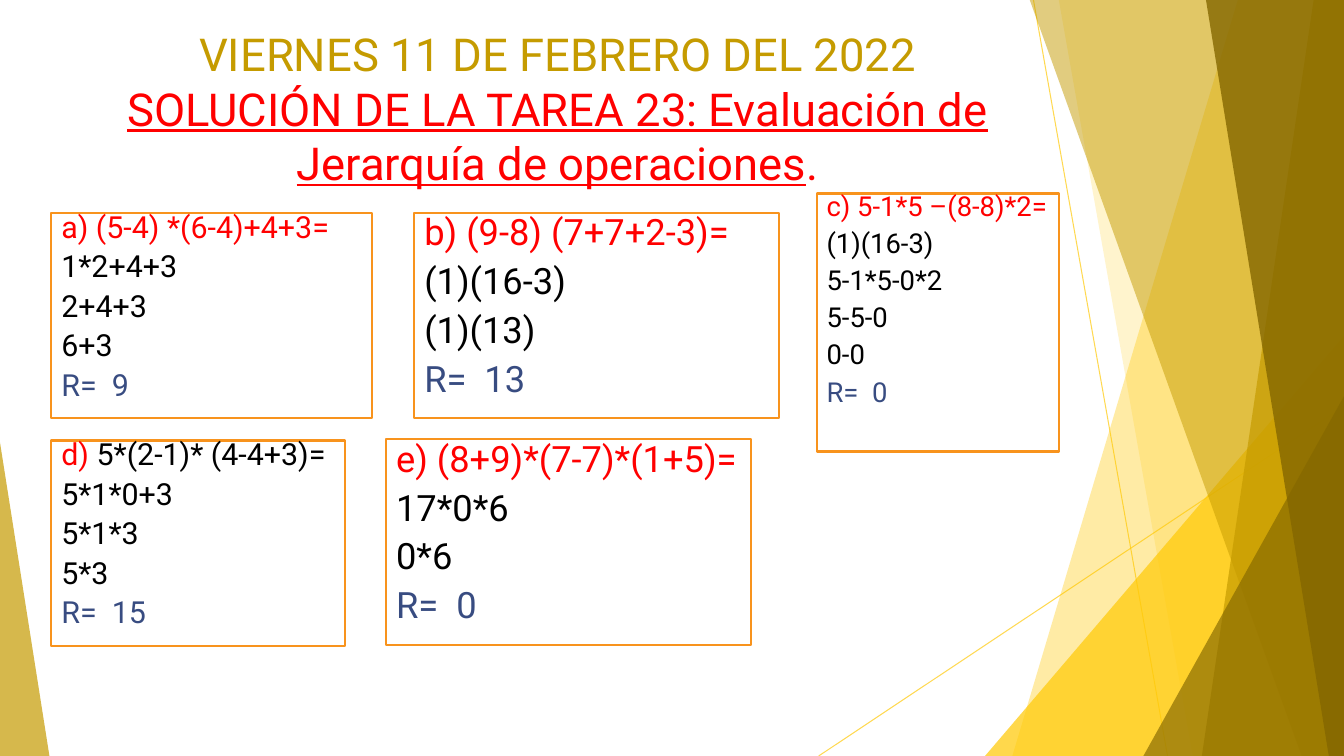
from dataclasses import dataclass

from lxml.etree import SubElement
from pptx import Presentation
from pptx.dml.color import RGBColor
from pptx.dml.fill import FillFormat
from pptx.enum.shapes import MSO_CONNECTOR, MSO_SHAPE
from pptx.enum.text import MSO_ANCHOR, MSO_AUTO_SIZE, PP_ALIGN
from pptx.oxml.ns import qn
from pptx.slide import Slide
from pptx.text.text import Font
from pptx.util import Emu, Pt

PX = 9144  # EMU per px, 100 px to the inch
WIDTH, HEIGHT = 1333, 750
FONT = "Roboto"
COLORS = {
    "yellow": "FFCA08",
    "gold": "C59B00",
    "bronze": "846700",
    "orange": "F8931D",
    "red": "FF0000",
    "blue": "384C81",
    "black": "000000",
    "white": "FFFFFF",
}


@dataclass
class Ray:
    start: tuple[int, int]
    end: tuple[int, int]


@dataclass
class Band:
    """Facet reaching the right edge, with a slanted left side."""
    top_x: int
    bottom_x: int
    color: str
    opacity: int


@dataclass
class Wedge:
    """Right triangle standing on the bottom edge."""
    left: int
    top: int
    width: int
    apex: int
    color: str
    opacity: int


@dataclass
class Exercise:
    box: tuple[int, int, int, int]
    size: float
    spacing: float
    label: str
    statement: str
    steps: list[str]
    result: str
    statement_color: str = "red"


RAYS = [Ray((1025, 0), (1158, 750)), Ray((1333, 403), (812, 750))]
FACETS = [
    Band(1228, 1004, "yellow", 36),
    Band(1050, 1183, "yellow", 20),
    Wedge(977, 333, 356, 1, "yellow", 72),
    Band(1021, 1291, "gold", 50),
    Band(1303, 1192, "gold", 70),
    Band(1196, 1318, "bronze", 80),
    Wedge(1134, 393, 199, 1, "bronze", 66),
    Wedge(0, 439, 49, 0, "gold", 70),
]
EXERCISES = [
    Exercise((51, 211, 318, 204), 21.7, 0.7, "a) ", "(5-4) *(6-4)+4+3=",
             ["1*2+4+3", "2+4+3", "6+3"], "R=  9"),
    Exercise((411, 211, 362, 204), 25.9, 0.8, "b) ", "(9-8) (7+7+2-3)=",
             ["(1)(16-3)", "(1)(13)"], "R=  13"),
    Exercise((810, 192, 240, 256), 19.6, 0.7, "c) ", "5-1*5 –(8-8)*2=",
             ["(1)(16-3)", "5-1*5-0*2", "5-5-0", "0-0"], "R=  0"),
    Exercise((51, 437, 291, 204), 21.7, 0.7, "d) ", "5*(2-1)* (4-4+3)=",
             ["5*1*0+3", "5*1*3", "5*3"], "R=  15", "black"),
    Exercise((383, 436, 362, 204), 25.9, 0.8, "e) ", "(8+9)*(7-7)*(1+5)=",
             ["17*0*6", "0*6"], "R=  0"),
]


def px(*lengths: int) -> list[Emu]:
    return [Emu(length * PX) for length in lengths]


def rgb(color: str) -> RGBColor:
    return RGBColor.from_string(COLORS[color])


def paint(fill: FillFormat, owner, color: str, opacity: int) -> None:
    """Fill with a colour and set its opacity in the owner's XML."""
    fill.solid()
    fill.fore_color.rgb = rgb(color)
    srgb = next(owner.iter(qn("a:srgbClr")))
    SubElement(srgb, qn("a:alpha"), val=str(opacity * 1000))


def style(font: Font, size: float, color: str) -> None:
    font.name = FONT
    font.size = Pt(size)
    font.color.rgb = rgb(color)


def draw_ray(slide: Slide, ray: Ray) -> None:
    line = slide.shapes.add_connector(
        MSO_CONNECTOR.STRAIGHT, *px(*ray.start, *ray.end))
    line.line.width = Pt(0.75)
    properties = line.element.spPr
    paint(line.line.fill, properties, "yellow", 70)
    SubElement(properties, qn("a:effectLst"))


def draw_facet(slide: Slide, facet: Band | Wedge) -> None:
    if isinstance(facet, Band):
        builder = slide.shapes.build_freeform(facet.top_x, -1, scale=PX)
        builder.add_line_segments(
            [(WIDTH, -1), (WIDTH, HEIGHT), (facet.bottom_x, HEIGHT)])
        shape = builder.convert_to_shape()
    else:
        shape = slide.shapes.add_shape(
            MSO_SHAPE.ISOSCELES_TRIANGLE,
            *px(facet.left, facet.top, facet.width, HEIGHT - facet.top))
        shape.adjustments[0] = facet.apex
    paint(shape.fill, shape.element.spPr, facet.color, facet.opacity)
    shape.line.fill.background()
    shape.shadow.inherit = False


def write_title(slide: Slide) -> None:
    title = slide.shapes.title
    title.element.getparent().append(title.element)  # in front of the facets
    title.left, title.top, title.width, title.height = px(77, 21, 952, 150)
    frame = title.text_frame
    frame.word_wrap = True
    frame.auto_size = MSO_AUTO_SIZE.NONE
    frame.vertical_anchor = MSO_ANCHOR.TOP
    heading = frame.paragraphs[0]
    heading.alignment = PP_ALIGN.CENTER
    style(heading.font, 32.4, "red")
    date = heading.add_run()
    date.text = "VIERNES 11 DE FEBRERO DEL 2022"
    date.font.color.rgb = rgb("gold")
    heading.add_line_break()
    topic = heading.add_run()
    topic.text = ("SOLUCIÓN DE LA TAREA 23: Evaluación de "
                  "Jerarquía de operaciones")
    topic.font.underline = True
    heading.add_run().text = "."


def draw_exercise(slide: Slide, exercise: Exercise) -> None:
    card = slide.shapes.add_shape(MSO_SHAPE.RECTANGLE, *px(*exercise.box))
    card.shadow.inherit = False
    card.fill.solid()
    card.fill.fore_color.rgb = rgb("white")
    card.line.color.rgb = rgb("orange")
    card.line.width = Pt(1.5)
    frame = card.text_frame
    frame.word_wrap = True
    frame.vertical_anchor = MSO_ANCHOR.TOP
    rows = [([exercise.label, exercise.statement], "red")]
    rows += [([step], "black") for step in exercise.steps]
    rows.append(([exercise.result], "blue"))
    for index, (parts, color) in enumerate(rows):
        row = frame.add_paragraph() if index else frame.paragraphs[0]
        row.alignment = PP_ALIGN.LEFT
        row.line_spacing = exercise.spacing
        row.space_before = Pt(10)
        style(row.font, exercise.size, color)
        for part in parts:
            row.add_run().text = part
    if exercise.statement_color != "red":
        statement = frame.paragraphs[0].runs[1]
        statement.font.color.rgb = rgb(exercise.statement_color)


def main() -> None:
    deck = Presentation()
    deck.slide_width, deck.slide_height = px(WIDTH, HEIGHT)
    slide = deck.slides.add_slide(deck.slide_layouts.get_by_name("Title Only"))
    for ray in RAYS:
        draw_ray(slide, ray)
    for facet in FACETS:
        draw_facet(slide, facet)
    write_title(slide)
    for exercise in EXERCISES:
        draw_exercise(slide, exercise)
    deck.save("out.pptx")


if __name__ == "__main__":
    main()
